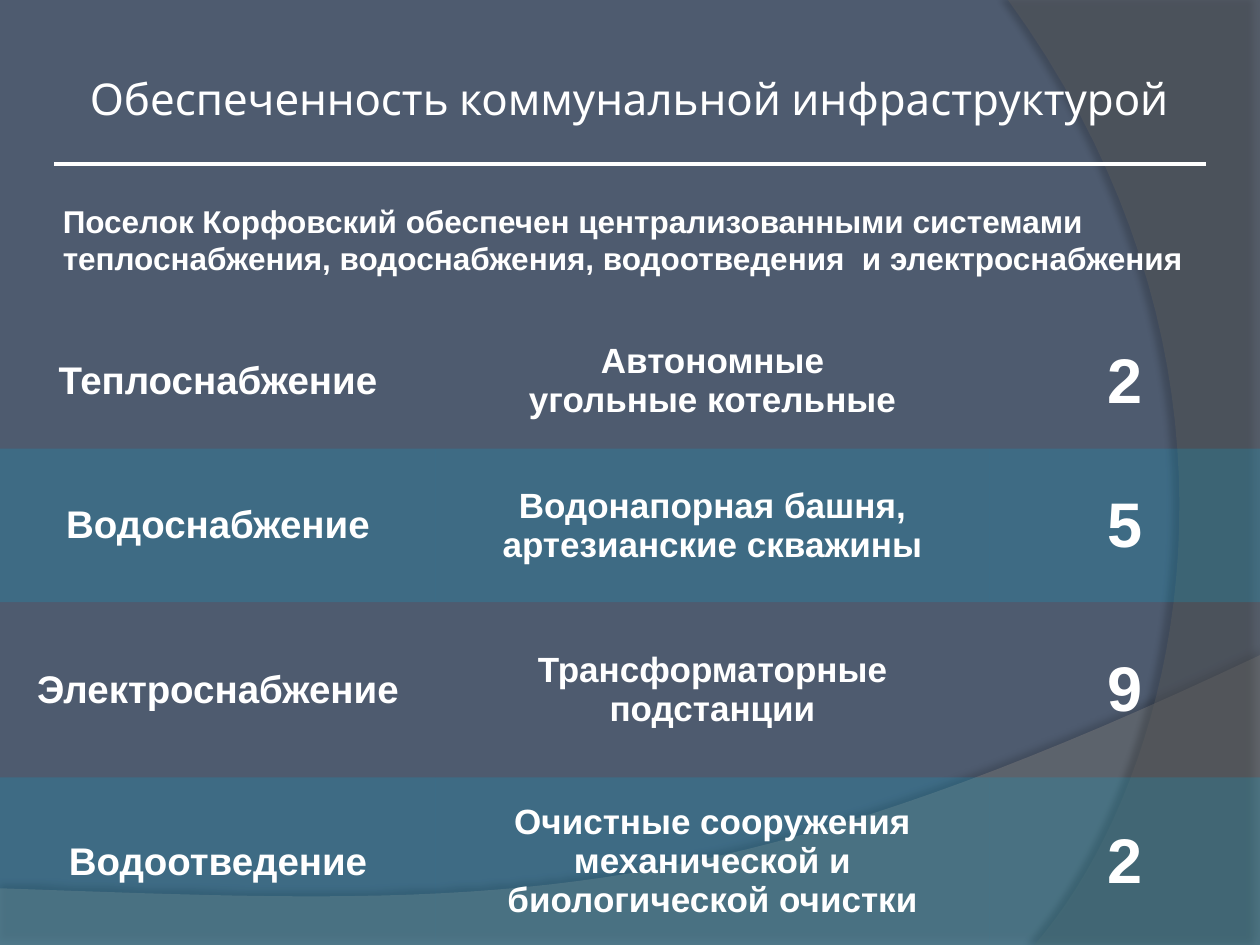
"""Build the slide on the utility infrastructure of the settlement."""
import dataclasses

import pptx
import pptx.dml.color
import pptx.enum.shapes
import pptx.enum.text
import pptx.oxml
import pptx.oxml.ns
import pptx.util

Inches = pptx.util.Inches
RGB = pptx.dml.color.RGBColor.from_string
ALIGN = pptx.enum.text.PP_ALIGN
MIDDLE = pptx.enum.text.MSO_ANCHOR.MIDDLE


@dataclasses.dataclass(frozen=True)
class Theme:
    background: str = "4E5B6F"
    text: str = "FFFFFF"
    band: str = "00ADDC"
    wave: str = "7F7F7F"
    arc: str = "5E5E5E"
    shadow: str = "000000"
    heading_font: str = "Karla"
    body_font: str = "Arial"
    heading_size: float = 25
    lead_size: float = 18
    service_size: float = 22
    facility_size: float = 20
    count_size: float = 36


THEME = Theme()


def write(frame, text, *, size, font=THEME.body_font, bold=True, align=ALIGN.CENTER):
    """Put text into a frame, one paragraph per line."""
    frame.word_wrap = True
    frame.text = text
    for paragraph in frame.paragraphs:
        paragraph.alignment = align
        paragraph.font.name = font
        paragraph.font.size = pptx.util.Pt(size)
        paragraph.font.bold = bold
        paragraph.font.color.rgb = RGB(THEME.text)


def set_opacity(element, percent):
    """Make every solid shape or cell fill inside an element translucent."""
    for color in element.xpath("(.//p:spPr | .//a:tcPr)/a:solidFill/a:srgbClr"):
        alpha = pptx.oxml.parse_xml(
            f'<a:alpha {pptx.oxml.ns.nsdecls("a")} val="{percent * 1000}"/>')
        color.append(alpha)


deck = pptx.Presentation()
deck.slide_width, deck.slide_height = Inches(10), Inches(7.5)
slide = deck.slides.add_slide(deck.slide_layouts[5])
slide.background.fill.solid()
slide.background.fill.fore_color.rgb = RGB(THEME.background)

STEPS = 40
backdrops = [
    dict(curve=[(10, 5.2), (5.59, 7.29), (3.91, 7.19), (0, 7.05)],
         corners=[(0, 7.5), (10, 7.5)], color=THEME.wave, opacity=45,
         shadow_opacity=35, distance=3.5, angle=270),
    dict(curve=[(8.21, 7.5), (9.35, 6.19), (10.18, 3), (8, 0)],
         corners=[(10, 0), (10, 7.5)], color=THEME.arc, opacity=40,
         shadow_opacity=45, distance=4, angle=180),
]
for backdrop in backdrops:
    outline = []
    for step in range(STEPS + 1):
        t = step / STEPS
        weights = [(1 - t) ** 3, 3 * t * (1 - t) ** 2, 3 * t ** 2 * (1 - t), t ** 3]
        outline.append([sum(w * point[axis] for w, point in zip(weights, backdrop["curve"]))
                        for axis in (0, 1)])
    outline += backdrop["corners"]
    points = [(Inches(x), Inches(y)) for x, y in outline]
    builder = slide.shapes.build_freeform(*points[0])
    builder.add_line_segments(points[1:], close=True)
    sweep = builder.convert_to_shape()
    sweep.fill.solid()
    sweep.fill.fore_color.rgb = RGB(backdrop["color"])
    sweep.line.fill.background()
    set_opacity(sweep.element, backdrop["opacity"])
    sweep.element.spPr.append(pptx.oxml.parse_xml(
        f'<a:effectLst {pptx.oxml.ns.nsdecls("a")}>'
        f'<a:outerShdw blurRad="{pptx.util.Pt(4)}" dist="{pptx.util.Pt(backdrop["distance"])}"'
        f' dir="{backdrop["angle"] * 60000}" algn="ctr" rotWithShape="0">'
        f'<a:srgbClr val="{THEME.shadow}">'
        f'<a:alpha val="{backdrop["shadow_opacity"] * 1000}"/>'
        '</a:srgbClr></a:outerShdw></a:effectLst>'))

rule = slide.shapes.add_connector(
    pptx.enum.shapes.MSO_CONNECTOR.STRAIGHT,
    Inches(0.43), Inches(1.3), Inches(9.57), Inches(1.3))
rule.line.color.rgb = RGB(THEME.text)
rule.line.width = pptx.util.Pt(2.25)
rule.element.spPr.append(
    pptx.oxml.parse_xml(f'<a:effectLst {pptx.oxml.ns.nsdecls("a")}/>'))

heading = slide.shapes.title
heading.left, heading.top = Inches(0.43), Inches(0.52)
heading.width, heading.height = Inches(9.13), Inches(0.52)
heading.text_frame.auto_size = pptx.enum.text.MSO_AUTO_SIZE.NONE
heading.text_frame.vertical_anchor = MIDDLE
write(heading.text_frame, "Обеспеченность коммунальной инфраструктурой",
      size=THEME.heading_size, font=THEME.heading_font, bold=False)
heading.element.getparent().append(heading.element)

lead = slide.shapes.add_textbox(Inches(0.4), Inches(1.55), Inches(9.37), Inches(0.71))
write(lead.text_frame,
      "Поселок Корфовский обеспечен централизованными системами "
      "теплоснабжения, водоснабжения, водоотведения  и электроснабжения",
      size=THEME.lead_size, align=ALIGN.LEFT)

services = [
    ("Теплоснабжение", "Автономные\nугольные котельные", "2"),
    ("Водоснабжение", "Водонапорная башня, артезианские скважины", "5"),
    ("Электроснабжение", "Трансформаторные подстанции", "9"),
    ("Водоотведение", "Очистные сооружения механической и биологической очистки", "2"),
]
column_widths = [3.46, 4.39, 2.15]
row_heights = [1.07, 1.22, 1.39, 1.34]
column_sizes = [THEME.service_size, THEME.facility_size, THEME.count_size]

supply = slide.shapes.add_table(
    len(services), len(column_widths), Inches(0), Inches(2.49), Inches(10), Inches(5.01))
supply.table.first_row = False
supply.table.horz_banding = False
for style in supply.element.xpath(".//a:tableStyleId"):
    style.text = "{2D5ABB26-0587-4C30-8999-92F81FD0307C}"
for column, width in zip(supply.table.columns, column_widths):
    column.width = Inches(width)
for index, (row, height, service) in enumerate(zip(supply.table.rows, row_heights, services)):
    row.height = Inches(height)
    for cell, text, size in zip(row.cells, service, column_sizes):
        write(cell.text_frame, text, size=size)
        cell.vertical_anchor = MIDDLE
        if index % 2:
            cell.fill.solid()
            cell.fill.fore_color.rgb = RGB(THEME.band)
        else:
            cell.fill.background()
set_opacity(supply.element, 20)

deck.save("out.pptx")
